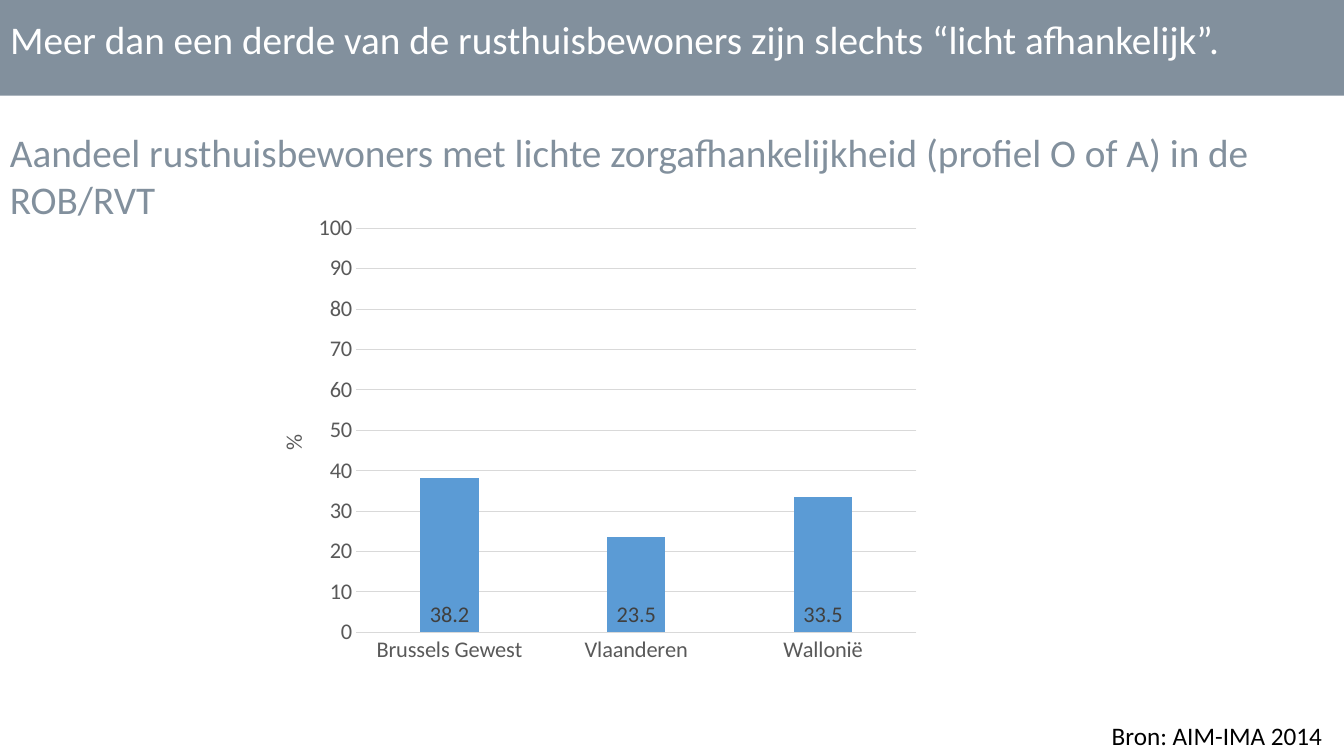
from lxml import etree
from pptx import Presentation
from pptx.chart.data import CategoryChartData
from pptx.dml.color import RGBColor
from pptx.enum.chart import XL_CHART_TYPE, XL_LABEL_POSITION, XL_TICK_MARK
from pptx.enum.shapes import MSO_SHAPE
from pptx.enum.text import MSO_ANCHOR, PP_ALIGN
from pptx.oxml.ns import qn
from pptx.util import Cm, Pt

COLUMN = XL_CHART_TYPE.COLUMN_CLUSTERED
BASE = XL_LABEL_POSITION.INSIDE_BASE
NO_TICK = XL_TICK_MARK.NONE
RECT = MSO_SHAPE.RECTANGLE
TOP = MSO_ANCHOR.TOP
LEFT, RIGHT = PP_ALIGN.LEFT, PP_ALIGN.RIGHT

# Content
TITLE = "Meer dan een derde van de rusthuisbewoners zijn slechts “licht afhankelijk”."
HEAD = ("Aandeel rusthuisbewoners met lichte zorgafhankelijkheid "
        "(profiel O of A) in de ROB/RVT")
SOURCE = "Bron: AIM-IMA 2014"
UNIT = "%"
SHARES = {"Brussels Gewest": 38.2, "Vlaanderen": 23.5, "Wallonië": 33.5}

# Style
FONT = "Calibri"
COLORS = {"slate": "82909D", "white": "FFFFFF", "black": "000000",
          "bar": "5B9BD5", "grid": "D9D9D9", "axis": "595959", "label": "404040"}
WIDE, HIGH = Cm(33.87), Cm(19.05)


def color(name):
    return RGBColor.from_string(COLORS[name])


def style(font, size, name):
    font.name, font.size, font.bold = FONT, Pt(size), False
    font.color.rgb = color(name)


def place(shape, left, top, width, height):
    shape.left, shape.top, shape.width, shape.height = left, top, width, height


def write(shape, text, size, name, align=LEFT):
    frame = shape.text_frame
    frame.word_wrap = True
    frame.vertical_anchor = TOP
    para = frame.paragraphs[0]
    para.alignment = align
    para.line_spacing = 1.0
    para.space_before = Pt(0)
    run = para.add_run()
    run.text = text
    style(run.font, size, name)


def rule(line):
    line.color.rgb = color("grid")
    line.width = Pt(0.75)


def layout(node, **parts):
    """Fix a chart part at fractions of the chart frame."""
    old = node.find(qn("c:layout"))
    if old is None:
        old = etree.Element(qn("c:layout"))
        spot = node.find(qn("c:tx"))
        if spot is None:
            node.insert(0, old)
        else:
            spot.addnext(old)
    for child in list(old):
        old.remove(child)
    manual = etree.SubElement(old, qn("c:manualLayout"))
    for key, val in parts.items():
        etree.SubElement(manual, qn("c:" + key)).set("val", str(val))


deck = Presentation()
deck.slide_width, deck.slide_height = WIDE, HIGH
slide = deck.slides.add_slide(deck.slide_layouts[5])
shapes = slide.shapes

# Title on its band
title = shapes.title
place(title, 0, Cm(0.25), WIDE, Cm(1.45))
write(title, TITLE, 28, "white")
band = shapes.add_shape(RECT, 0, 0, WIDE, Cm(2.41))
band.shadow.inherit = False
band.fill.solid()
band.fill.fore_color.rgb = color("slate")
band.line.fill.background()
title.element.addprevious(band.element)

# Source and heading
source = shapes.add_textbox(Cm(15.57), Cm(18.03), WIDE - Cm(15.57), Cm(1.02))
source.text_frame.margin_right = Cm(0.55)
write(source, SOURCE, 18, "black", RIGHT)
head = shapes.add_textbox(0, Cm(3.1), WIDE, Cm(2.64))
write(head, HEAD, 28, "slate")

# Chart
data = CategoryChartData()
data.categories = list(SHARES)
data.add_series("Series 1", list(SHARES.values()))
chart = shapes.add_chart(COLUMN, Cm(6.22), Cm(5.16), Cm(17.22), Cm(11.84), data).chart
chart.has_legend = chart.has_title = False
style(chart.font, 10, "black")
plot = chart.plots[0]
plot.gap_width, plot.overlap, plot.vary_by_categories = 219, -27, False
bars = plot.series[0]
bars.format.fill.solid()
bars.format.fill.fore_color.rgb = color("bar")
labels = bars.data_labels
labels.show_value = True
labels.position = BASE
style(labels.font, 16, "label")

# Axes
cat, val = chart.category_axis, chart.value_axis
for axis in (cat, val):
    axis.major_tick_mark = axis.minor_tick_mark = NO_TICK
    style(axis.tick_labels.font, 16, "axis")
rule(cat.format.line)
val.format.line.fill.background()
val.minimum_scale, val.maximum_scale, val.major_unit = 0, 100, 10
val.has_major_gridlines = True
rule(val.major_gridlines.format.line)
unit = val.axis_title.text_frame.paragraphs[0].add_run()
unit.text = UNIT
style(unit.font, 16, "axis")

# Fixed places inside the chart
area = chart.element.find(".//" + qn("c:plotArea"))
layout(area, layoutTarget="inner", xMode="edge", yMode="edge",
       x=0.16, y=0.05, w=0.82, h=0.86)
layout(area.find(".//" + qn("c:title")), xMode="edge", yMode="edge", x=0.04, y=0.48)

deck.save("out.pptx")
